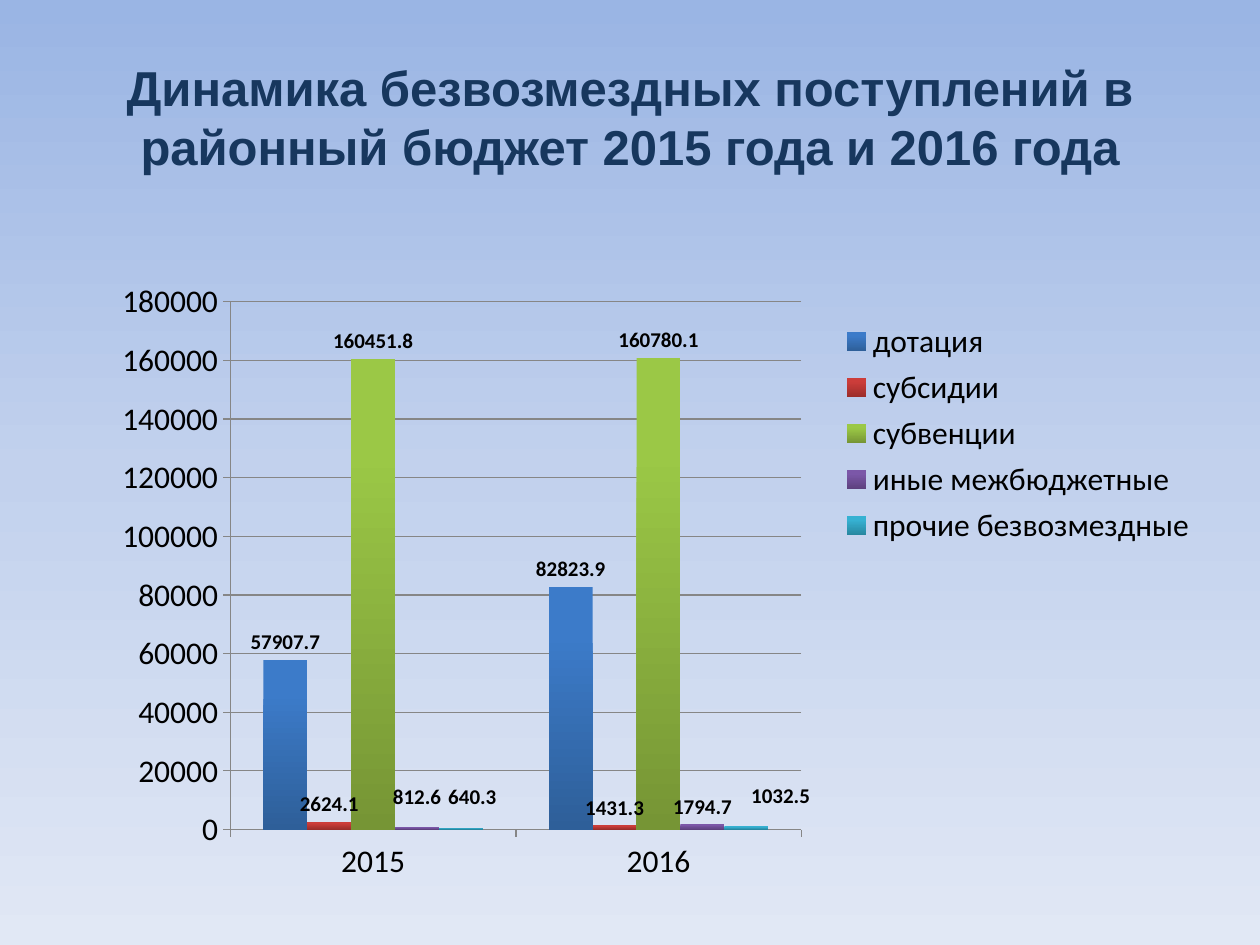
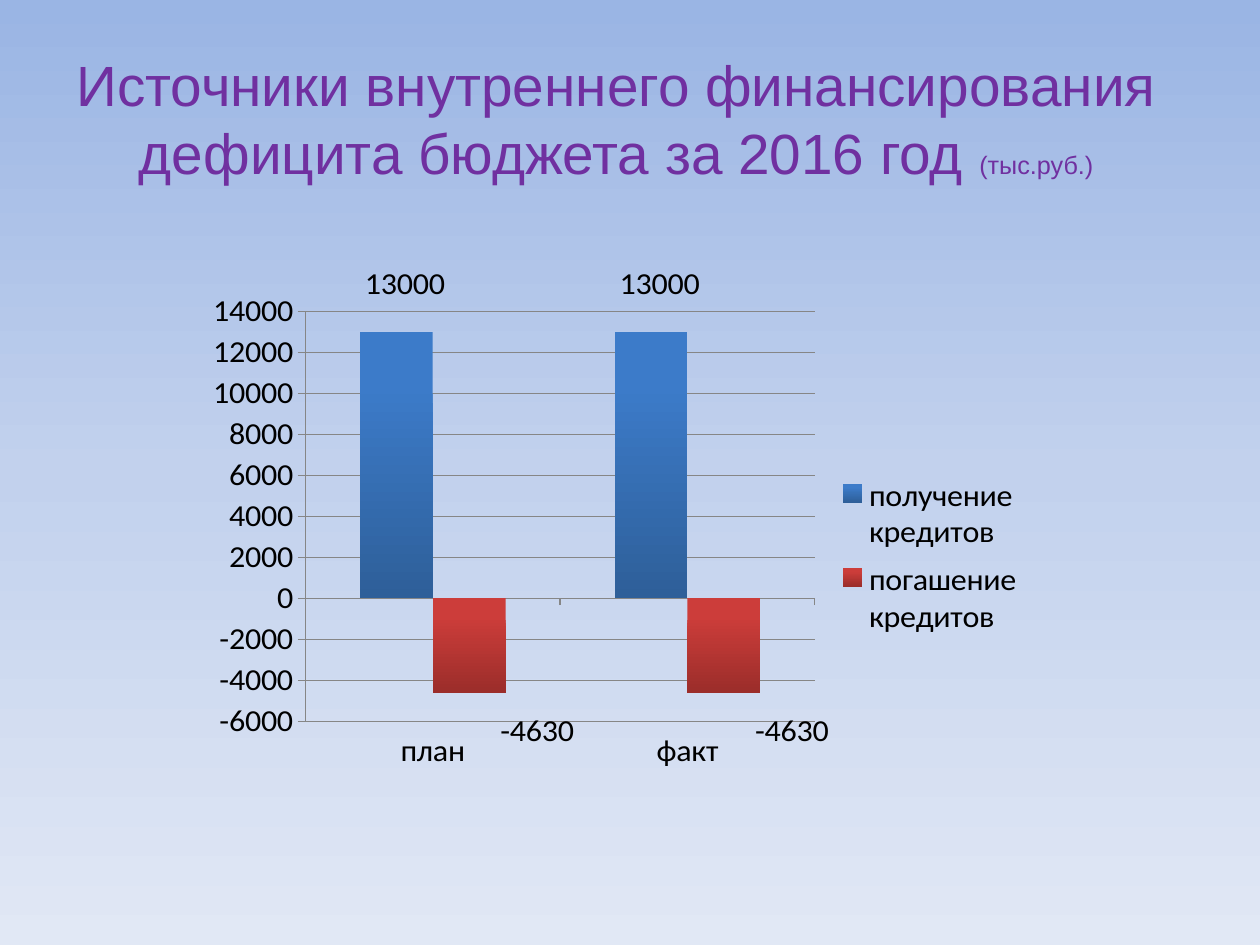
from copy import deepcopy

from lxml import etree
from pptx import Presentation
from pptx.chart.data import CategoryChartData
from pptx.dml.color import RGBColor
from pptx.enum.chart import (XL_CHART_TYPE, XL_LABEL_POSITION,
                             XL_LEGEND_POSITION, XL_TICK_LABEL_POSITION,
                             XL_TICK_MARK)
from pptx.enum.text import MSO_ANCHOR, MSO_AUTO_SIZE, PP_ALIGN
from pptx.oxml.ns import qn
from pptx.util import Inches, Pt

COLUMNS = XL_CHART_TYPE.COLUMN_CLUSTERED
OUTSIDE = XL_LABEL_POSITION.OUTSIDE_END
RIGHT = XL_LEGEND_POSITION.RIGHT
LOW = XL_TICK_LABEL_POSITION.LOW
TICK_OUT = XL_TICK_MARK.OUTSIDE
MIDDLE = MSO_ANCHOR.MIDDLE
NO_FIT = MSO_AUTO_SIZE.NONE
CENTER = PP_ALIGN.CENTER

BLACK = RGBColor(0x00, 0x00, 0x00)
NAVY = RGBColor(0x17, 0x37, 0x5E)
PURPLE = RGBColor(0x70, 0x30, 0xA0)
GRAY = RGBColor(0x86, 0x86, 0x86)
SKY = [
    (0, RGBColor(0x9A, 0xB5, 0xE4)),
    (0.5, RGBColor(0xC2, 0xD1, 0xED)),
    (1, RGBColor(0xE1, 0xE8, 0xF5)),
]
BAR_SHADES = [
    (RGBColor(0x3C, 0x7B, 0xC9), RGBColor(0x2E, 0x5F, 0x99)),
    (RGBColor(0xCC, 0x3D, 0x3A), RGBColor(0x9B, 0x2D, 0x2A)),
    (RGBColor(0x9B, 0xC8, 0x46), RGBColor(0x76, 0x95, 0x35)),
    (RGBColor(0x7B, 0x57, 0xA8), RGBColor(0x5D, 0x41, 0x7E)),
    (RGBColor(0x36, 0xB1, 0xD2), RGBColor(0x27, 0x87, 0xA0)),
]
TITLE_FONT = "Arial"
CHART_FONT = "Calibri"
DOWNWARD = 270


class BudgetDeck:
    def __init__(self):
        self.deck = Presentation()
        self.deck.slide_width = Inches(10)
        self.deck.slide_height = Inches(7.5)
        self.page = None
        self.paint_background()

    def paint_background(self):
        master = self.deck.slide_master
        fill = master.background.fill
        fill.gradient()
        stops = next(master.element.iter(qn("a:gsLst")))
        stops.append(deepcopy(stops[-1]))
        self.shade(fill, SKY)

    def shade(self, fill, stops):
        fill.gradient_angle = DOWNWARD
        for stop, (position, color) in zip(fill.gradient_stops, stops):
            stop.position = position
            stop.color.rgb = color

    def add_page(self):
        self.page = self.deck.slides.add_slide(self.deck.slide_layouts[5])

    def add_title(self, left, top, spans, color):
        box = self.page.shapes.title
        box.left, box.top = Inches(left), Inches(top)
        box.width, box.height = Inches(9), Inches(1.25)
        frame = box.text_frame
        frame.auto_size = NO_FIT
        frame.word_wrap = True
        frame.vertical_anchor = MIDDLE
        para = frame.paragraphs[0]
        para.alignment = CENTER
        for text, size, bold in spans:
            span = para.add_run()
            span.text = text
            self.set_font(span.font, TITLE_FONT, size, color, bold)

    def set_font(self, font, name, size, color, bold=False):
        font.name = name
        font.size = Pt(size)
        font.bold = bold
        font.color.rgb = color

    def add_chart(self, bounds, categories, rows, text_size, scale):
        data = CategoryChartData()
        data.categories = categories
        for name, values in rows:
            data.add_series(name, values)
        frame = self.page.shapes.add_chart(
            COLUMNS, *[Inches(length) for length in bounds], data)
        chart = frame.chart
        chart.has_title = False
        self.set_font(chart.font, CHART_FONT, text_size, BLACK)
        plot = chart.plots[0]
        plot.vary_by_categories = False
        plot.gap_width = 150
        plot.overlap = 0
        for series, (light, dark) in zip(plot.series, BAR_SHADES):
            series.invert_if_negative = False
            fill = series.format.fill
            fill.gradient()
            self.shade(fill, [(0.2, light), (1, dark)])
        self.style_axes(chart, scale)
        return chart

    def style_axes(self, chart, scale):
        values = chart.value_axis
        values.minimum_scale, values.maximum_scale, values.major_unit = scale
        values.has_major_gridlines = True
        chart.category_axis.tick_label_position = LOW
        lines = [values.major_gridlines.format.line]
        for axis in (values, chart.category_axis):
            axis.major_tick_mark = TICK_OUT
            lines.append(axis.format.line)
        for line in lines:
            line.color.rgb = GRAY
            line.width = Pt(0.75)

    def add_layout(self, parent, index, sizes, inner=False):
        for old in parent.findall(qn("c:layout")):
            parent.remove(old)
        layout = etree.Element(qn("c:layout"))
        manual = etree.SubElement(layout, qn("c:manualLayout"))
        settings = [("layoutTarget", "inner")] if inner else []
        if len(sizes) == 4:
            settings += [("xMode", "edge"), ("yMode", "edge")]
        settings += zip("xywh", sizes)
        for tag, value in settings:
            etree.SubElement(manual, qn("c:" + tag)).set("val", str(value))
        parent.insert(index, layout)

    def place_parts(self, chart, plot_area, legend_area):
        chart.has_legend = True
        chart.legend.position = RIGHT
        chart.legend.include_in_layout = False
        area = next(chart.element.iter(qn("c:plotArea")))
        legend = next(chart.element.iter(qn("c:legend")))
        self.add_layout(area, 0, plot_area, inner=True)
        self.add_layout(legend, 1, legend_area)

    def add_labels(self, chart, size, bold, shifts):
        for number, series in enumerate(chart.plots[0].series):
            labels = series.data_labels
            labels.show_value = True
            labels.position = OUTSIDE
            self.set_font(labels.font, CHART_FONT, size, BLACK, bold)
            for point, shift in shifts.get(number, {}).items():
                label = series.points[point].data_label
                self.set_font(label.font, CHART_FONT, size, BLACK, bold)
                label.position = OUTSIDE
                found = chart.element.xpath(
                    f".//c:ser[{number + 1}]//c:dLbl[c:idx/@val='{point}']")
                self.add_layout(found[0], 1, shift)
        for leader in chart.element.iter(qn("c:showLeaderLines")):
            leader.set("val", "0")


def build_transfers(style):
    style.add_page()
    style.add_title(0.5, 0.3, [
        ("Динамика безвозмездных поступлений в районный бюджет "
         "2015 года и 2016 года", 28, True),
    ], NAVY)
    chart = style.add_chart((0.47, 2.19, 9.06, 5.11), ["2015", "2016"], [
        ("дотация", (57907.7, 82823.9)),
        ("субсидии", (2624.1, 1431.3)),
        ("субвенции", (160451.8, 160780.1)),
        ("иные межбюджетные", (812.6, 1794.7)),
        ("прочие безвозмездные", (640.3, 1032.5)),
    ], 18, (0, 180000, 20000))
    style.place_parts(chart, (0.15, 0.04, 0.5, 0.82),
                      (0.68, 0.06, 0.32, 0.37))
    style.add_labels(chart, 12, True, {
        3: {0: (0, -0.02)},
        4: {0: (0.01, -0.02), 1: (0.03, -0.02)},
    })


def build_financing(style):
    style.add_page()
    style.add_title(0.39, 0.31, [
        ("Источники внутреннего финансирования дефицита бюджета "
         "за 2016 год ", 32.4, False),
        ("(тыс.руб.)", 14.4, False),
    ], PURPLE)
    chart = style.add_chart((1.48, 2.11, 6.74, 4.17), ["план", "факт"], [
        ("получение кредитов", (13000, 13000)),
        ("погашение кредитов", (-4630, -4630)),
    ], 18.3, (-6000, 14000, 2000))
    style.place_parts(chart, (0.14, 0.04, 0.6, 0.82),
                      (0.76, 0.35, 0.23, 0.36))
    style.add_labels(chart, 18.3, False, {
        0: {0: (0.01, -0.05), 1: (0.01, -0.05)},
        1: {0: (0.08, 0.03), 1: (0.08, 0.03)},
    })


def main():
    style = BudgetDeck()
    build_transfers(style)
    build_financing(style)
    style.deck.save("out.pptx")


if __name__ == "__main__":
    main()
